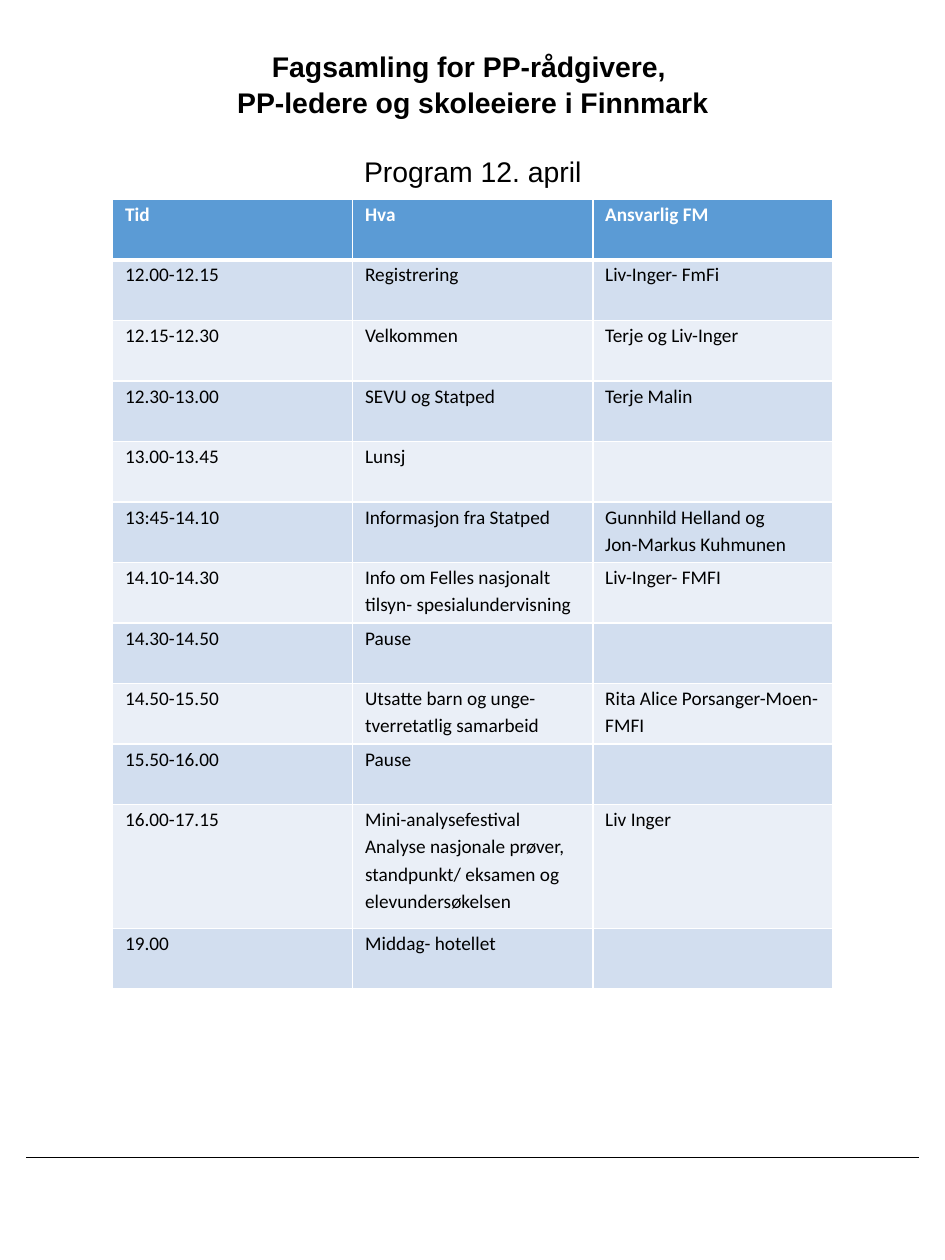
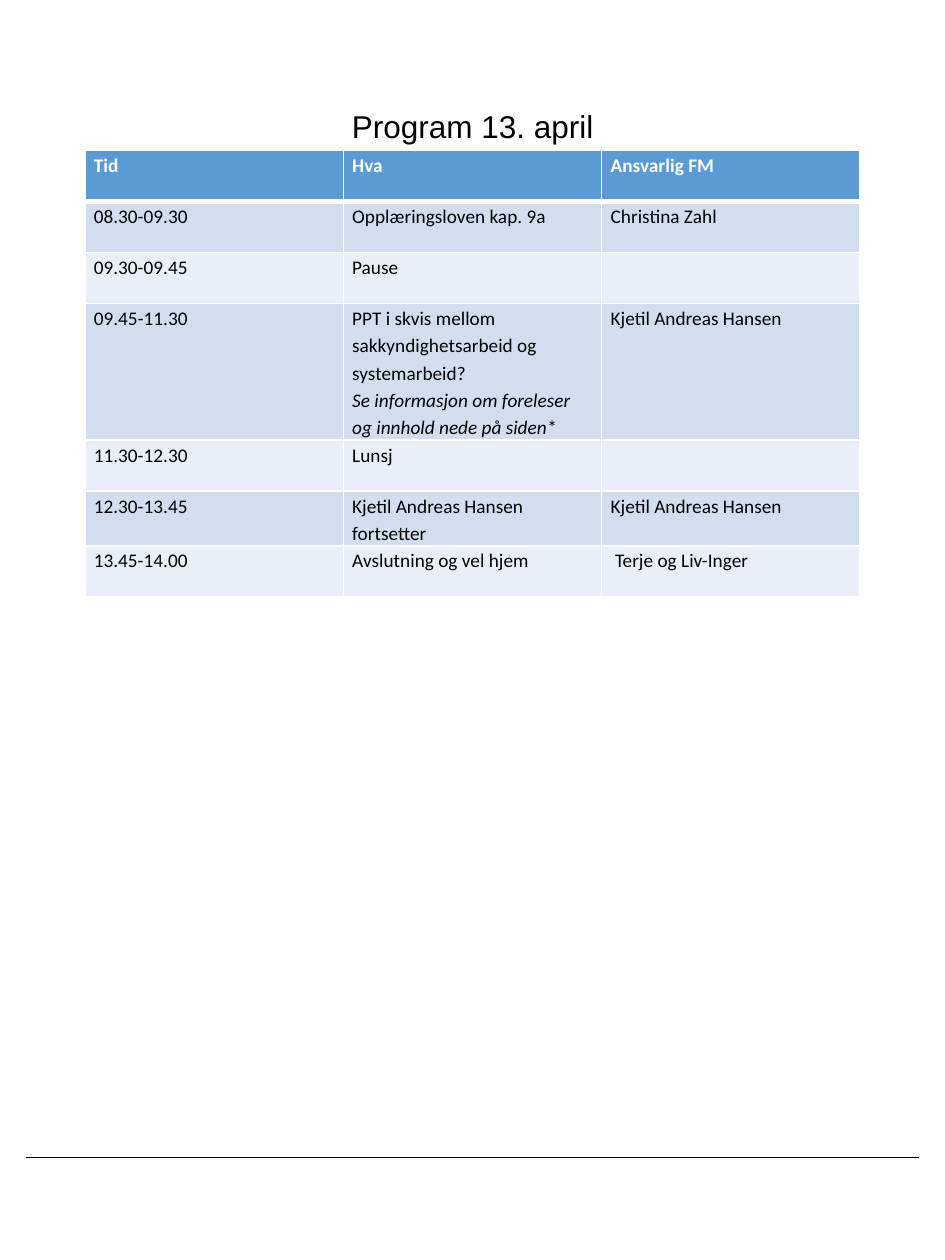
from dataclasses import dataclass
from lxml import etree
from pptx import Presentation
from pptx.dml.color import RGBColor as RGB
from pptx.enum.shapes import MSO_CONNECTOR as LINK
from pptx.enum.text import MSO_ANCHOR as ANCHOR, MSO_AUTO_SIZE as FIT, PP_ALIGN as ALIGN
from pptx.oxml.ns import qn
from pptx.util import Cm, Pt


@dataclass(frozen=True)
class Theme:
    ink: str = "000000"
    paper: str = "FFFFFF"
    head: str = "5B9BD5"
    bands: tuple = ("D2DEEF", "EAEFF7")
    sans: str = "Arial"
    body: str = "Calibri"
    big: float = 18
    mid: float = 16.2
    small: float = 11
    thin: float = 1
    thick: float = 3


HEAD = ("Tid", "Hva", "Ansvarlig FM")

DAY_ONE = [
    ("12.00-12.15", "Registrering", "Liv-Inger- FmFi"),
    ("12.15-12.30", "Velkommen", "Terje og Liv-Inger"),
    ("12.30-13.00", "SEVU og Statped", "Terje Malin"),
    ("13.00-13.45", "Lunsj", ""),
    ("13:45-14.10", "Informasjon fra Statped", "Gunnhild Helland og\nJon-Markus Kuhmunen"),
    ("14.10-14.30", "Info om Felles nasjonalt tilsyn- spesialundervisning", "Liv-Inger- FMFI"),
    ("14.30-14.50", "Pause", ""),
    ("14.50-15.50", "Utsatte barn og unge- tverretatlig samarbeid", "Rita Alice Porsanger-Moen- FMFI"),
    ("15.50-16.00", "Pause", ""),
    ("16.00-17.15", "Mini-analysefestival Analyse nasjonale prøver, standpunkt/ eksamen og "
                    "elevundersøkelsen", "Liv Inger"),
    ("19.00", "Middag- hotellet", ""),
]

DAY_TWO = [
    ("08.30-09.30", "Opplæringsloven kap. 9a", "Christina Zahl"),
    ("09.30-09.45", "Pause", ""),
    ("09.45-11.30", "PPT i skvis mellom sakkyndighetsarbeid og systemarbeid?\n"
                    "_Se informasjon om foreleser og innhold nede på siden_*", "Kjetil Andreas Hansen"),
    ("11.30-12.30", "Lunsj", ""),
    ("12.30-13.45", "Kjetil Andreas Hansen fortsetter", "Kjetil Andreas Hansen"),
    ("13.45-14.00", "Avslutning og vel hjem", " Terje og Liv-Inger"),
]


class Deck:
    def __init__(self, theme):
        self.theme = theme
        self.prs = Presentation()
        self.prs.slide_width, self.prs.slide_height = Cm(19.05), Cm(25.4)
        self.slide = None

    def page(self):
        """Start a slide with the line at its foot."""
        self.slide = self.prs.slides.add_slide(self.prs.slide_layouts[5])
        y = Cm(23.34)
        line = self.slide.shapes.add_connector(LINK.STRAIGHT, Cm(0.53), y, Cm(18.52), y)
        line.line.color.rgb = RGB.from_string(self.theme.ink)
        line.line.width = Pt(0.5)
        etree.SubElement(line._element.spPr, qn("a:effectLst"))

    def style(self, para, name, size, color, bold=False):
        font = para.font
        font.name, font.size, font.bold = name, Pt(size), bold
        font.color.rgb = RGB.from_string(color)

    def title(self, top, height, size, day, event=""):
        """Fill the title with the day, below the bold event if there is one."""
        box = self.slide.shapes.title
        box.left, box.top, box.width, box.height = Cm(0.53), Cm(top), Cm(18), Cm(height)
        frame = box.text_frame
        frame.margin_left = frame.margin_right = frame.margin_top = frame.margin_bottom = 0
        frame.vertical_anchor, frame.auto_size = ANCHOR.TOP, FIT.NONE
        frame.text = f"{event}\n{day}" if event else day
        for para in frame.paragraphs:
            self.style(para, self.theme.sans, size, self.theme.ink)
            para.alignment = ALIGN.CENTER
        if event:
            first, last = frame.paragraphs
            first.font.bold = True
            first.line_spacing = last.line_spacing = 1.04
            last.space_before = Pt(19.4)

    def edges(self, cell, row):
        """Draw white borders, thick between the head and the first row."""
        props = cell._tc.get_or_add_tcPr()
        thick = {(0, "lnB"), (1, "lnT")}
        for i, side in enumerate(("lnL", "lnR", "lnT", "lnB")):
            width = self.theme.thick if (row, side) in thick else self.theme.thin
            line = etree.Element(qn(f"a:{side}"), w=str(Pt(width)))
            fill = etree.SubElement(line, qn("a:solidFill"))
            etree.SubElement(fill, qn("a:srgbClr"), val=self.theme.paper)
            props.insert(i, line)

    def cell(self, cell, row, text, pad):
        """Fill a cell; parts between underscores are italic."""
        look = self.theme
        cell.fill.solid()
        cell.fill.fore_color.rgb = RGB.from_string(look.bands[(row - 1) % 2] if row else look.head)
        cell.margin_left = cell.margin_right = Cm(pad)
        cell.margin_top = cell.margin_bottom = 0
        self.edges(cell, row)
        frame = cell.text_frame
        for i, part in enumerate(text.split("\n")):
            para = frame.add_paragraph() if i else frame.paragraphs[0]
            para.line_spacing = 1.15
            self.style(para, look.body, look.small, look.ink if row else look.paper, not row)
            for j, piece in enumerate(part.split("_")):
                if piece:
                    run = para.add_run()
                    run.text = piece
                    if j % 2:
                        run.font.italic = True

    def table(self, rows, left, top, col, high, pad, tall=None):
        """Add a plan; tall maps row numbers to their own heights."""
        rows = [HEAD, *rows]
        sizes = [Cm((tall or {}).get(i, high)) for i in range(len(rows))]
        grid = self.slide.shapes.add_table(
            len(rows), len(HEAD), Cm(left), Cm(top), Cm(col * len(HEAD)), sum(sizes)).table
        grid.horz_banding = False
        for column in grid.columns:
            column.width = Cm(col)
        for i, texts in enumerate(rows):
            grid.rows[i].height = sizes[i]
            for j, text in enumerate(texts):
                self.cell(grid.cell(i, j), i, text, pad)


def main():
    theme = Theme()
    deck = Deck(theme)

    deck.page()
    deck.title(0.97, 2.64, theme.mid, "Program 12. april",
               "Fagsamling for PP-rådgivere, \vPP-ledere og skoleeiere i Finnmark")
    deck.table(DAY_ONE, left=2.27, top=4.02, col=4.84, high=1.22, pad=0.25, tall={10: 2.5})

    deck.page()
    deck.title(2.16, 1.73, theme.big, "Program 13. april")
    deck.table(DAY_TWO, left=1.71, top=3.03, col=5.21, high=1.03, pad=0.18)

    deck.prs.save("out.pptx")


if __name__ == "__main__":
    main()
